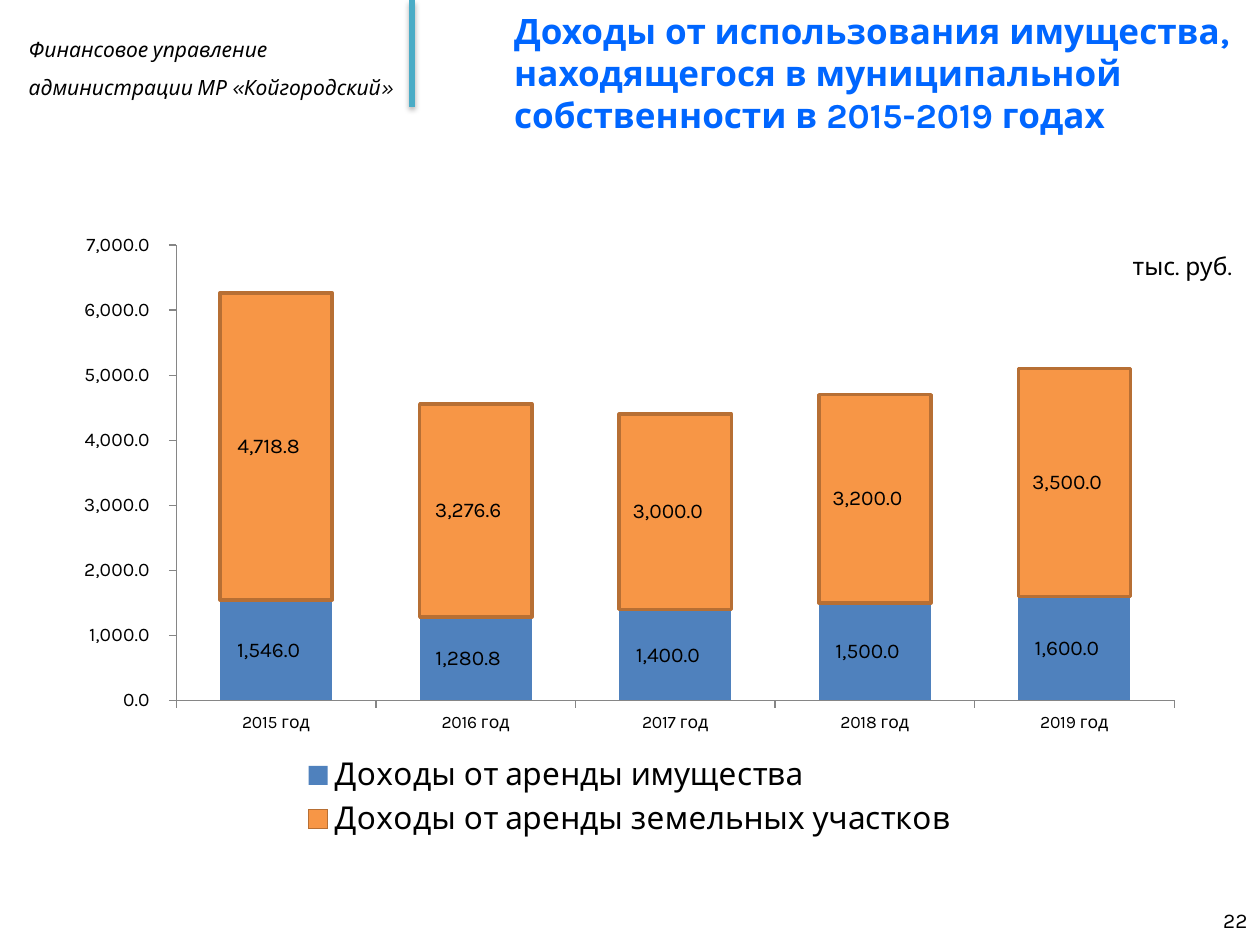
"""Build a slide on municipal property income with a stacked column chart."""
import pptx
import pptx.chart.data
import pptx.dml.color
import pptx.enum.chart
import pptx.enum.shapes
import pptx.enum.text
import pptx.oxml
import pptx.oxml.ns
import pptx.util

THEME = {
    "font": "Karla", "text": "000000", "title": "0066FF", "rule": "4BACC6", "axis": "868686",
    "size": {"title": 20, "key": 18, "unit": 14, "text": 12, "value": 11, "year": 10},
}
WIDE, HIGH = 10, 7.5
TITLE = "Доходы от использования имущества, находящегося в муниципальной собственности в 2015-2019 годах"
OFFICE = ["Финансовое управление", "администрации МР «Койгородский»"]
UNIT, PAGE = "тыс. руб.", "22"
YEARS = [f"{year} год" for year in range(2015, 2020)]
SERIES = [
    ("Доходы от аренды имущества", [1546, 1280.8, 1400, 1500, 1600], "4F81BD", None),
    ("Доходы от аренды земельных участков", [4718.8, 3276.6, 3000, 3200, 3500], "F79646", "B76F34"),
]
FORMAT = "#,##0.0_р_."
AREAS = {
    "office": (0.013, 0.019, 0.314, 0.095),
    "title": (0.398, 0, 0.602, 0.153),
    "chart": (0.05, 0.233, 0.9, 0.66),
    "page": (0.767, 0.947, 0.233, 0.053),
    "unit": (0.889, 0.259, 0.105, 0.045),
}
RULE = (0.327, 0.113)
PLOT, KEY = (0.1, 0.04, 0.88, 0.73), (0.2, 0.85, 0.6, 0.15)
ALIGN, ANCHOR = pptx.enum.text.PP_ALIGN, pptx.enum.text.MSO_ANCHOR


def area(name):
    x, y, w, h = AREAS[name]
    return [pptx.util.Inches(n) for n in (x * WIDE, y * HIGH, w * WIDE, h * HIGH)]


def tint(value):
    return pptx.dml.color.RGBColor.from_string(value)


def style(font, size, color=THEME["text"], bold=False, italic=False):
    font.name, font.size = THEME["font"], pptx.util.Pt(THEME["size"][size])
    font.color.rgb = tint(color)
    font.bold, font.italic = bold, italic


def write(shape, lines, size, align=ALIGN.LEFT, anchor=ANCHOR.TOP, gap=1, **look):
    frame = shape.text_frame
    frame.word_wrap, frame.vertical_anchor = True, anchor
    frame.auto_size = pptx.enum.text.MSO_AUTO_SIZE.NONE
    frame.text = "\n".join(lines)
    for line in frame.paragraphs:
        line.alignment, line.line_spacing = align, gap
        style(line.font, size, **look)


def add_text(slide, name, lines, size, **look):
    write(slide.shapes.add_textbox(*area(name)), lines, size, **look)


def add_rule(slide):
    x, end = pptx.util.Inches(RULE[0] * WIDE), pptx.util.Inches(RULE[1] * HIGH)
    rule = slide.shapes.add_connector(pptx.enum.shapes.MSO_CONNECTOR.STRAIGHT, x, 0, x, end)
    rule.line.color.rgb, rule.line.width = tint(THEME["rule"]), pptx.util.Pt(3)
    rule._element.spPr.append(pptx.oxml.parse_xml(
        f'<a:effectLst {pptx.oxml.ns.nsdecls("a")}>'
        '<a:outerShdw blurRad="39370" dist="22860" dir="5400000" rotWithShape="0">'
        '<a:srgbClr val="000000"><a:alpha val="35000"/></a:srgbClr>'
        '</a:outerShdw></a:effectLst>'))


def place(node, index, box, inner=False):
    for old in node.findall(pptx.oxml.ns.qn("c:layout")):
        node.remove(old)
    target = '<c:layoutTarget val="inner"/>' if inner else ""
    modes = "".join(f'<c:{k}Mode val="edge"/>' for k in "xy")
    sides = "".join(f'<c:{k} val="{v}"/>' for k, v in zip("xywh", box))
    node.insert(index, pptx.oxml.parse_xml(
        f'<c:layout {pptx.oxml.ns.nsdecls("c")}><c:manualLayout>'
        f'{target}{modes}{sides}</c:manualLayout></c:layout>'))


def add_chart(slide):
    kinds = pptx.enum.chart
    data = pptx.chart.data.CategoryChartData(number_format=FORMAT)
    data.categories = YEARS
    for name, values, *_ in SERIES:
        data.add_series(name, values)
    chart = slide.shapes.add_chart(kinds.XL_CHART_TYPE.COLUMN_STACKED, *area("chart"), data).chart
    style(chart.font, "key")
    chart.has_title = False
    chart.has_legend = True
    chart.legend.position = kinds.XL_LEGEND_POSITION.BOTTOM
    chart.legend.include_in_layout = False
    style(chart.legend.font, "key")
    for axis, size in ((chart.category_axis, "year"), (chart.value_axis, "value")):
        style(axis.tick_labels.font, size)
        axis.has_major_gridlines = False
        axis.major_tick_mark = kinds.XL_TICK_MARK.OUTSIDE
        axis.format.line.color.rgb = tint(THEME["axis"])
    scale = chart.value_axis
    scale.minimum_scale, scale.maximum_scale, scale.major_unit = 0, 7000, 1000
    scale.tick_labels.number_format = FORMAT
    scale.tick_labels.number_format_is_linked = False
    plot = chart.plots[0]
    plot.gap_width, plot.overlap, plot.vary_by_categories = 78, 100, False
    for bars, (_, _, fill, edge) in zip(plot.series, SERIES):
        bars.format.fill.solid()
        bars.format.fill.fore_color.rgb = tint(fill)
        if edge:
            bars.format.line.color.rgb = tint(edge)
            bars.format.line.width = pptx.util.Pt(2)
        labels = bars.data_labels
        labels.show_value = True
        labels.number_format, labels.number_format_is_linked = FORMAT, False
        style(labels.font, "text")
    place(chart._chartSpace.chart.plotArea, 0, PLOT, inner=True)
    place(chart.legend._element, 1, KEY)


def main():
    deck = pptx.Presentation()
    deck.slide_width, deck.slide_height = pptx.util.Inches(WIDE), pptx.util.Inches(HIGH)
    slide = deck.slides.add_slide(deck.slide_layouts[5])
    title = slide.shapes.title
    title.left, title.top, title.width, title.height = area("title")
    write(title, [TITLE], "title", anchor=ANCHOR.MIDDLE, color=THEME["title"], bold=True)
    add_text(slide, "office", OFFICE, "text", gap=1.5, italic=True)
    add_rule(slide)
    add_chart(slide)
    add_text(slide, "page", [PAGE], "text", align=ALIGN.RIGHT, anchor=ANCHOR.MIDDLE)
    add_text(slide, "unit", [UNIT], "unit")
    deck.save("out.pptx")


if __name__ == "__main__":
    main()
